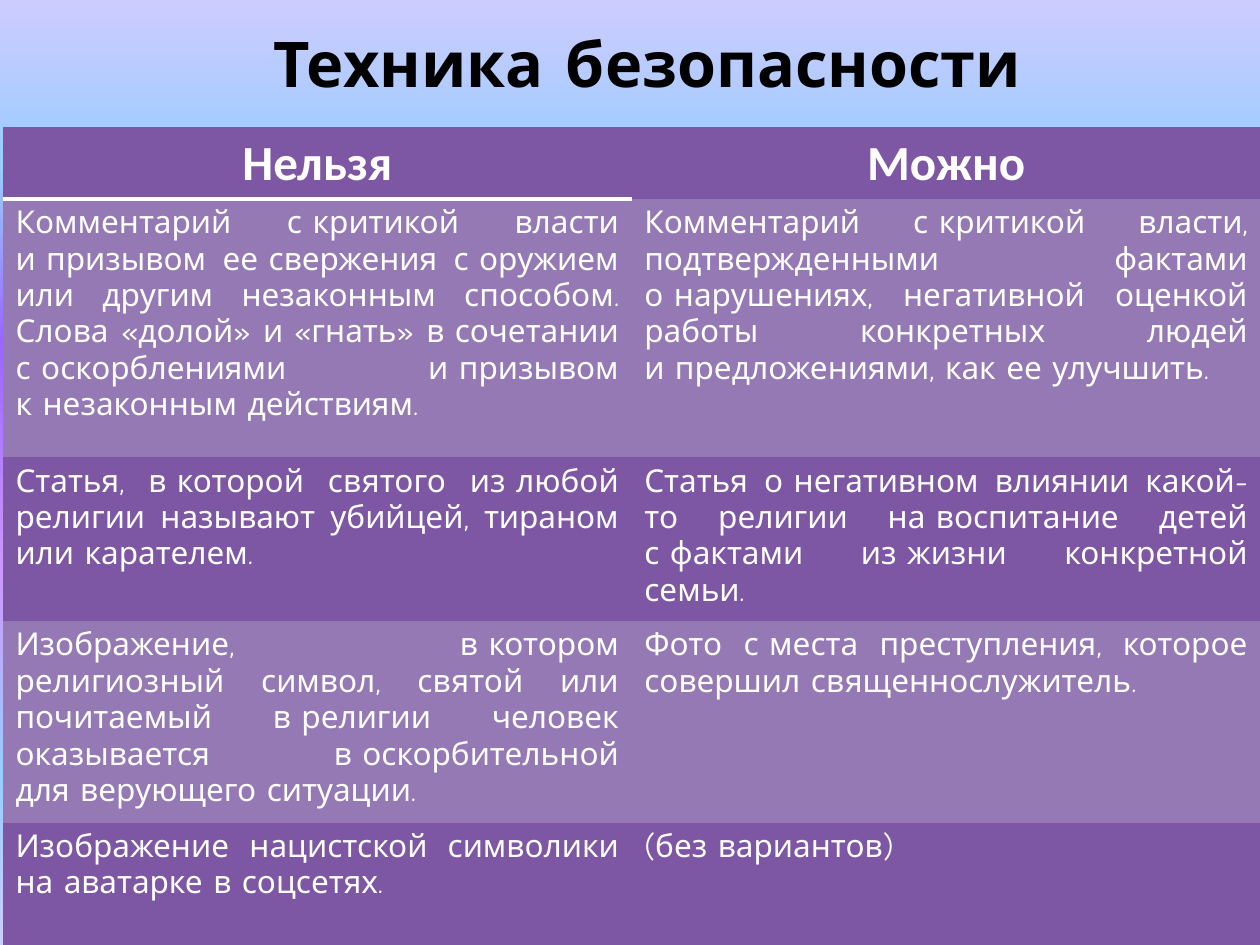
from dataclasses import dataclass

from pptx import Presentation
from pptx import util as u
from pptx.dml.color import RGBColor
from pptx.enum import text
from pptx.oxml import parse_xml
from pptx.oxml.ns import nsdecls, qn


@dataclass(frozen=True)
class Theme:
    dark: str = "7D57A4"
    light: str = "9579B5"
    white: str = "FFFFFF"
    black: str = "000000"
    gradient: tuple = ((0, "CCCCFF"), (18, "99CCFF"), (36, "9966FF"),
                       (61, "CC99FF"), (82, "99CCFF"), (100, "CCCCFF"))
    body_font: str = "Comic Neue"
    head_font: str = "Calibri"
    title_size: int = 36
    head_size: int = 28
    body_size: int = 18
    no_style: str = "{2D5ABB26-0587-4C30-8999-92F81FD0307C}"


# A tilde stands for a no-break space
NO_BREAK = chr(160)
ROWS = [
    ("Нельзя", "Можно"),
    ("Комментарий с~критикой власти и~призывом ее~свержения с~оружием или другим "
     "незаконным способом. Слова «долой» и~«гнать» в~сочетании с~оскорблениями "
     "и~призывом к~незаконным действиям.",
     "Комментарий с~критикой власти, подтвержденными фактами о~нарушениях, негативной "
     "оценкой работы конкретных людей и~предложениями, как ее~улучшить."),
    ("Статья, в~которой святого из~любой религии называют убийцей, тираном "
     "или карателем.",
     "Статья о~негативном влиянии какой-то религии на~воспитание детей с~фактами "
     "из~жизни конкретной семьи."),
    ("Изображение, в~котором религиозный символ, святой или почитаемый в~религии "
     "человек оказывается в~оскорбительной для~верующего ситуации.",
     "Фото с~места преступления, которое совершил священнослужитель."),
    ("Изображение нацистской символики на~аватарке в~соцсетях.",
     "(без вариантов)"),
]
ROW_HEIGHTS = (1.12, 5.21, 2.9, 3.73, 2.9)


class SlideBuilder:
    def __init__(self, prs, theme):
        self.theme = theme
        self.s = prs.slides.add_slide(prs.slide_layouts[5])

    def style(self, p, font, size, color, bold, align):
        p.alignment = align
        p.font.name, p.font.size, p.font.bold = font, u.Pt(size), bold
        p.font.color.rgb = RGBColor.from_string(color)

    def background(self):
        fill = self.s.background.fill
        fill.gradient()
        grad = self.s.element.find(".//" + qn("a:gradFill"))
        stops = "".join(f'<a:gs pos="{pos * 1000}"><a:srgbClr val="{c}"/></a:gs>'
                        for pos, c in self.theme.gradient)
        grad.getparent().replace(grad, parse_xml(
            f'<a:gradFill {nsdecls("a")} rotWithShape="1"><a:gsLst>{stops}</a:gsLst>'
            '<a:lin ang="5400000" scaled="0"/></a:gradFill>'))

    def title(self, words, left, top, width, height):
        t = self.theme
        sp = self.s.shapes.title
        sp.left, sp.top, sp.width, sp.height = map(u.Cm, (left, top, width, height))
        tf = sp.text_frame
        tf.text = words
        tf.word_wrap = True
        tf.auto_size = text.MSO_AUTO_SIZE.SHAPE_TO_FIT_TEXT
        tf.vertical_anchor = text.MSO_ANCHOR.TOP
        self.style(tf.paragraphs[0], t.body_font, t.title_size, t.black, True,
                   text.PP_ALIGN.CENTER)

    def bottom_border(self, cell, color, width):
        tcPr = cell._tc.get_or_add_tcPr()
        tcPr.insert(0, parse_xml(
            f'<a:lnB {nsdecls("a")} w="{u.Pt(width)}"><a:solidFill>'
            f'<a:srgbClr val="{color}"/></a:solidFill></a:lnB>'))

    def table(self, rows, heights, left, top, width, height):
        t = self.theme
        frame = self.s.shapes.add_table(len(rows), len(rows[0]),
                                        *map(u.Cm, (left, top, width, height)))
        tbl = frame.table
        tbl._tbl.tblPr.find(qn("a:tableStyleId")).text = t.no_style
        for i, (words, row_height) in enumerate(zip(rows, heights)):
            tbl.rows[i].height = u.Cm(row_height)
            for j, word in enumerate(words):
                cell = tbl.cell(i, j)
                cell.text = word.replace("~", NO_BREAK)
                cell.fill.solid()
                cell.fill.fore_color.rgb = RGBColor.from_string(
                    t.light if i % 2 else t.dark)
                p = cell.text_frame.paragraphs[0]
                if i == 0:
                    self.style(p, t.head_font, t.head_size, t.white, True,
                               text.PP_ALIGN.CENTER)
                else:
                    self.style(p, t.body_font, t.body_size, t.white, False,
                               text.PP_ALIGN.JUSTIFY)
        # Rule under the first heading
        self.bottom_border(tbl.cell(0, 0), t.white, 3)
        frame.height = u.Cm(height)


def main():
    prs = Presentation()
    prs.slide_width, prs.slide_height = u.Cm(25.4), u.Cm(19.05)
    slide = SlideBuilder(prs, Theme())
    slide.background()
    # Heading
    slide.title("Техника безопасности", 5.02, 0.36, 16.08, 1.8)
    # Forbidden and allowed posts side by side
    slide.table(ROWS, ROW_HEIGHTS, 0.06, 2.57, 25.35, 16.48)
    prs.save("out.pptx")


if __name__ == "__main__":
    main()
